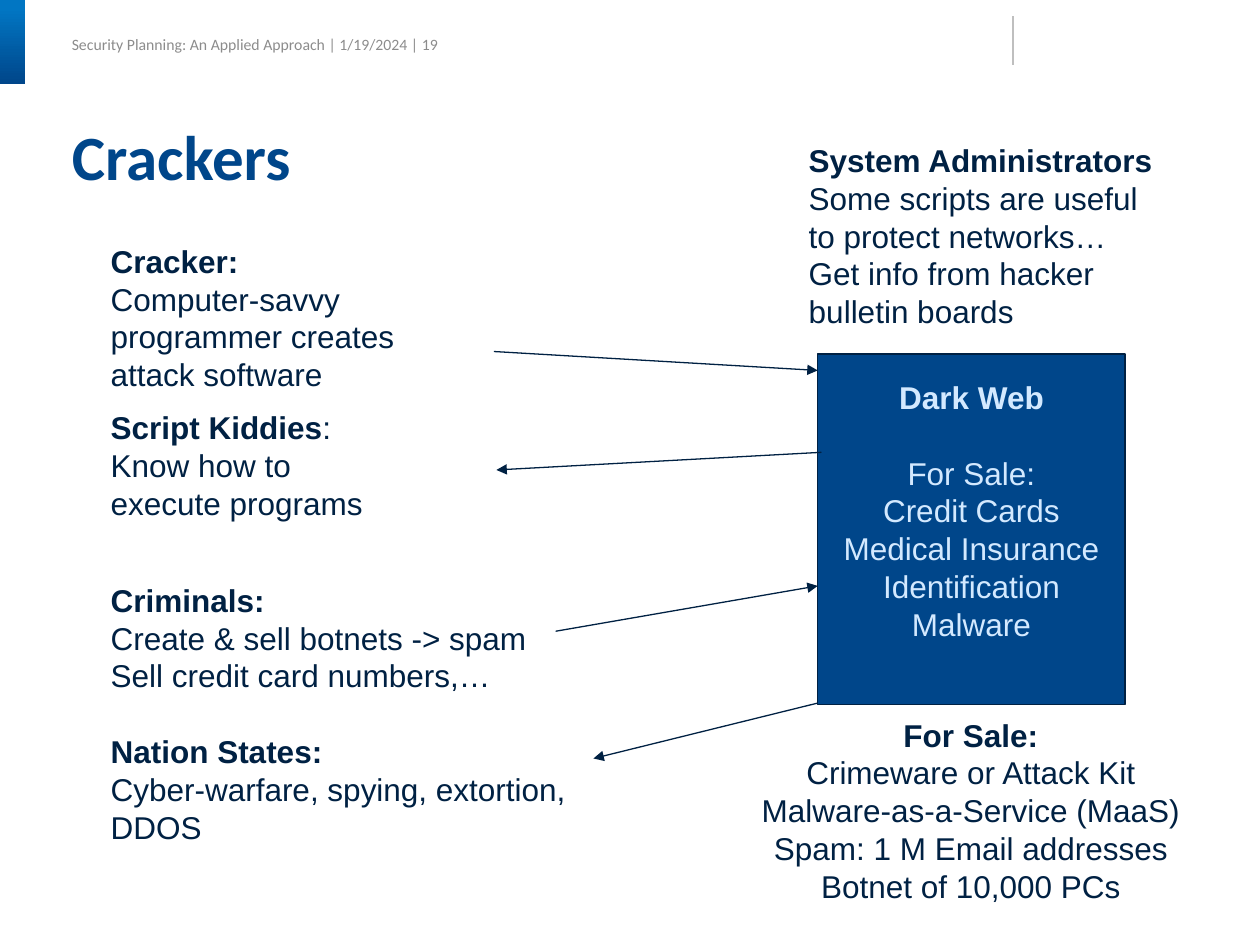
from lxml import etree
from pptx import Presentation
from pptx import util as u
from pptx.dml.color import RGBColor
from pptx.enum import shapes, text
from pptx.oxml.ns import qn

NAVY = RGBColor(0x00, 0x21, 0x43)
BLUE = RGBColor(0x00, 0x46, 0x8A)
BRIGHT_BLUE = RGBColor(0x01, 0x76, 0xC3)
PALE_BLUE = RGBColor(0xD3, 0xE9, 0xFF)
GREY = RGBColor(0x8C, 0x8C, 0x8C)
LIGHT_GREY = RGBColor(0xBF, 0xBF, 0xBF)

LEFT, CENTER = text.PP_ALIGN.LEFT, text.PP_ALIGN.CENTER
LINE_PITCH = 21.6


class Deck:
    """Slide on a grid of 100 columns by 75 rows, with its text style."""

    def __init__(self):
        self.prs = Presentation()
        self.prs.slide_width, self.prs.slide_height = u.Inches(10), u.Inches(7.5)
        self.cell = self.prs.slide_width / 100
        self.slide = self.prs.slides.add_slide(self.prs.slide_layouts[5])

    def grid(self, *cells):
        return [u.Emu(round(cell * self.cell)) for cell in cells]

    def run(self, paragraph, words, color, size=18, font="Arial", bold=False):
        run = paragraph.add_run()
        run.text = words
        run.font.name, run.font.size, run.font.bold = font, u.Pt(size), bold
        run.font.color.rgb = color

    def title(self, words, *place):
        title = self.slide.shapes.title
        title.left, title.top, title.width, title.height = self.grid(*place)
        frame = title.text_frame
        self.no_margins(frame)
        frame.vertical_anchor = text.MSO_ANCHOR.TOP
        paragraph = frame.paragraphs[0]
        paragraph.alignment, paragraph.line_spacing = LEFT, 0.9
        self.run(paragraph, words, BLUE, 36, "Calibri", True)

    def no_margins(self, frame):
        frame.margin_left = frame.margin_right = 0
        frame.margin_top = frame.margin_bottom = 0

    def header(self, words, *place):
        frame = self.slide.shapes.add_textbox(*self.grid(*place)).text_frame
        self.no_margins(frame)
        frame.vertical_anchor = text.MSO_ANCHOR.MIDDLE
        self.run(frame.paragraphs[0], words, GREY, 9, "Calibri")

    def fill_text(self, frame, groups, color, align):
        """Each group is a bold heading, its ending and its lines; a line parts groups."""
        first = True
        for heading, ending, *lines in groups:
            for row, line in enumerate([heading, *lines]):
                paragraph = frame.paragraphs[0] if first else frame.add_paragraph()
                paragraph.alignment = align
                paragraph.line_spacing = u.Pt(LINE_PITCH)
                if row == 0 and not first:
                    paragraph.space_before = u.Pt(LINE_PITCH)
                first = False
                self.run(paragraph, line, color, bold=row == 0)
                if row == 0 and ending:
                    self.run(paragraph, ending, color)

    def note(self, groups, *place, align=LEFT, wrap=False):
        frame = self.slide.shapes.add_textbox(*self.grid(*place)).text_frame
        frame.word_wrap = wrap
        self.fill_text(frame, groups, NAVY, align)

    def rectangle(self, *place):
        box = self.slide.shapes.add_shape(
            shapes.MSO_SHAPE.RECTANGLE, *self.grid(*place))
        box.shadow.inherit = False
        return box

    def accent(self, *place):
        tab = self.rectangle(*place)
        tab.line.fill.background()
        tab.fill.gradient()
        tab.fill.gradient_angle = 270
        stops = zip(tab.fill.gradient_stops, ((0.1, BRIGHT_BLUE), (1, BLUE)))
        for stop, (position, color) in stops:
            stop.position, stop.color.rgb = position, color

    def market(self, heading, goods, *place):
        box = self.rectangle(*place)
        box.fill.solid()
        box.fill.fore_color.rgb = BLUE
        box.line.color.rgb, box.line.width = NAVY, u.Pt(0.75)
        frame = box.text_frame
        frame.word_wrap = True
        frame.vertical_anchor = text.MSO_ANCHOR.MIDDLE
        frame.margin_bottom = u.Inches(0.35)
        self.fill_text(frame, [(heading, "", *goods)], PALE_BLUE, CENTER)
        frame.paragraphs[1].space_before = u.Pt(LINE_PITCH)

    def line(self, *ends, color=NAVY, arrow=True):
        line = self.slide.shapes.add_connector(
            shapes.MSO_CONNECTOR.STRAIGHT, *self.grid(*ends))
        line.line.color.rgb, line.line.width = color, u.Pt(0.75)
        if arrow:
            etree.SubElement(line.line._get_or_add_ln(), qn("a:tailEnd"), type="triangle")
        etree.SubElement(line._element.spPr, qn("a:effectLst"))


def main():
    deck = Deck()
    deck.header("Security Planning: An Applied Approach | 1/19/2024 | 19",
                5.7, 2.4, 30, 2.3)
    deck.accent(0, 0, 2, 6.7)
    deck.line(80.4, 1.3, 80.4, 5.2, color=LIGHT_GREY, arrow=False)
    deck.title("Crackers", 5.7, 10, 89.2, 5.5)

    deck.note([("Cracker:", "", "Computer-savvy", "programmer creates",
                "attack software")], 7.8, 18.7, 24.5, 13)
    deck.note([("Script Kiddies", ":", "Know how to", "execute programs")],
              7.8, 31.9, 22, 10)
    deck.market("Dark Web", ["For Sale:", "Credit Cards", "Medical Insurance",
                             "Identification", "Malware"], 64.9, 28.1, 24.4, 27.8)
    deck.note([("Criminals:", "", "Create & sell botnets -> spam",
                "Sell credit card numbers,…"),
               ("Nation States:", "", "Cyber-warfare, spying, extortion, DDOS")],
              7.8, 45.6, 41.9, 25.2, wrap=True)

    for ends in ((64.9, 55.8, 47.1, 60.2), (39.2, 27.9, 64.9, 29.4),
                 (65.2, 35.9, 39.4, 37.3), (44.1, 50.1, 64.9, 46.5)):
        deck.line(*ends)

    deck.note([("System Administrators", "", "Some scripts are useful",
                "to protect networks…", "Get info from hacker",
                "bulletin boards")], 63.2, 10.7, 29.5, 16.2)
    deck.note([("For Sale:", "", "Crimeware or Attack Kit",
                "Malware-as-a-Service (MaaS)", "Spam: 1 M Email addresses",
                "Botnet of 10,000 PCs")], 59.3, 56.3, 35.5, 16.2, align=CENTER)
    deck.prs.save("out.pptx")


if __name__ == "__main__":
    main()
